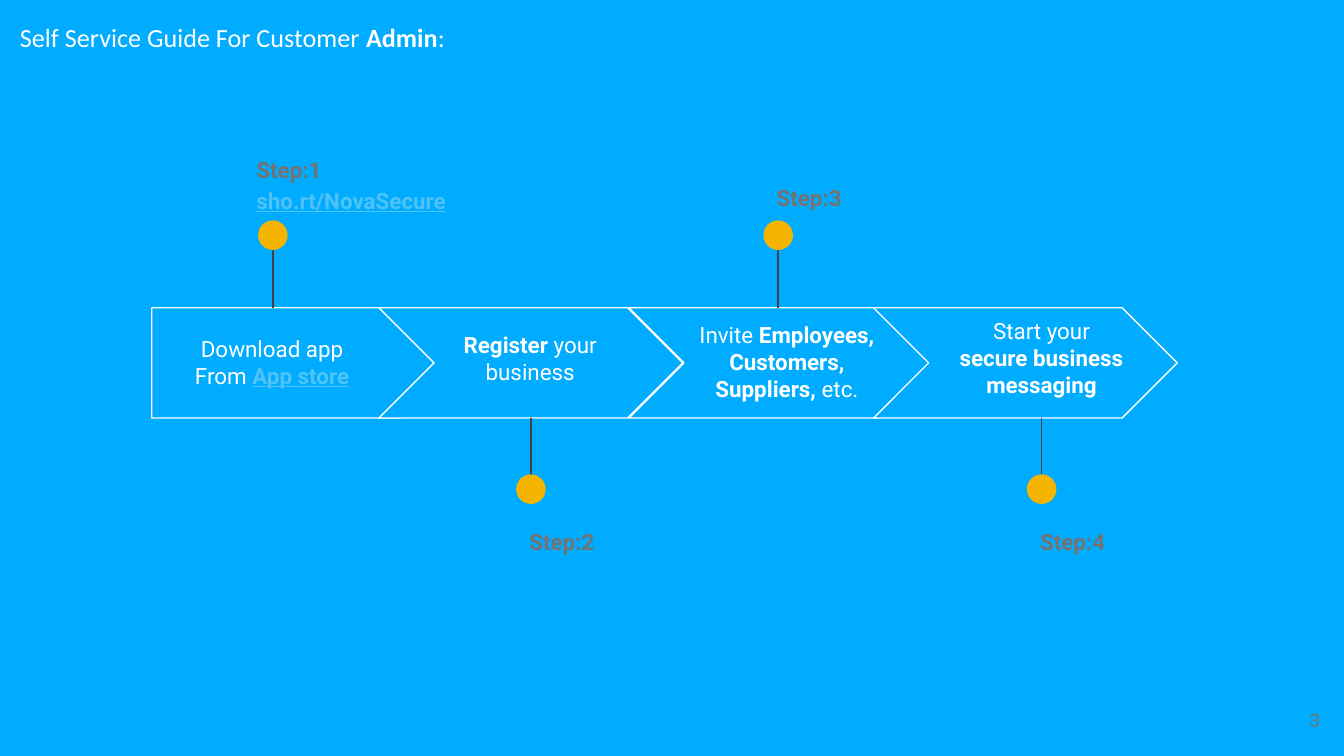
import pptx
import pptx.util
import pptx.dml.color
import pptx.enum.shapes
import pptx.enum.text
import pptx.oxml.ns
import lxml.etree

Inches = pptx.util.Inches
SHAPE = pptx.enum.shapes.MSO_SHAPE
ALIGN = pptx.enum.text.PP_ALIGN
ANCHOR = pptx.enum.text.MSO_ANCHOR

THEME = {
    "blue": "00ACFF", "white": "FFFFFF", "grey": "737373", "link": "4FC3F7",
    "dot": "F4B400", "stem": "424242",
    "title_font": "Calibri", "body_font": "Roboto",
    "title_size": 14, "body_size": 12, "number_size": 10, "line_width": 0.75,
}

# Content: each paragraph is a list of (text, style) runs
TITLE = [[("Self Service Guide For Customer ", ""), ("Admin", "bold"), (":", "")]]
PAGE_NUMBER = [[("3", "")]]
STEPS = [
    {"block_left": 1.13, "text_box": (1.23, 2.44, 1.59, 0.51), "stem": 2.03, "above": True,
     "text": [[("Download app", "")], [("From ", ""), ("App store", "bold link")]],
     "label": [[("Step:1", "bold")], [("sho.rt/NovaSecure", "bold link")]],
     "label_box": (1.81, 1.03, 2.36, 0.61)},
    {"block_left": 2.82, "text_box": (3.15, 2.41, 1.59, 0.51), "stem": 3.95, "above": False,
     "text": [[("Register", "bold"), (" your business", "")]],
     "label": [[("Step:2", "bold")]], "label_box": (3.84, 3.8, 0.83, 0.4)},
    {"block_left": 4.68, "text_box": (5.08, 2.49, 1.55, 0.4), "stem": 5.79, "above": True,
     "text": [[("Invite ", ""), ("Employees, Customers, Suppliers,", "bold"), (" etc.", "")]],
     "label": [[("Step:3", "bold")]], "label_box": (5.68, 1.24, 0.83, 0.4)},
    {"block_left": 6.5, "text_box": (7.03, 2.46, 1.44, 0.4), "stem": 7.75, "above": False,
     "text": [[("Start your ", ""), ("secure business messaging", "bold")]],
     "label": [[("Step:4", "bold")]], "label_box": (7.64, 3.8, 0.83, 0.4)},
]

# Layout
SLIDE_WIDTH = 10
SLIDE_HEIGHT = SLIDE_WIDTH * 9 / 16
BLOCK_TOP, BLOCK_WIDTH, BLOCK_HEIGHT = 2.29, 2.26, 0.82
DOT_SIZE, DOT_TOP_ABOVE, DOT_TOP_BELOW = 0.22, 1.64, 3.53


def color(name):
    return pptx.dml.color.RGBColor.from_string(THEME[name])


def add_block(slide, kind, box, fill, outline=None):
    shape = slide.shapes.add_shape(kind, *map(Inches, box))
    shape.shadow.inherit = False
    shape.fill.solid()
    shape.fill.fore_color.rgb = color(fill)
    if outline:
        shape.line.color.rgb = color(outline)
        shape.line.width = pptx.util.Pt(THEME["line_width"])
    else:
        shape.line.fill.background()


def add_text(slide, box, paragraphs, ink="white", size="body_size", font="body_font",
             align=ALIGN.LEFT, anchor=ANCHOR.TOP, spacing=None):
    text_frame = slide.shapes.add_textbox(*map(Inches, box)).text_frame
    text_frame.word_wrap = True
    text_frame.vertical_anchor = anchor
    text_frame.margin_left = text_frame.margin_right = Inches(0.1)
    text_frame.margin_top = text_frame.margin_bottom = Inches(0.1)
    for index, runs in enumerate(paragraphs):
        paragraph = text_frame.add_paragraph() if index else text_frame.paragraphs[0]
        paragraph.alignment = align
        if spacing:
            paragraph.line_spacing = spacing
        for text, style in runs:
            run = paragraph.add_run()
            run.text = text
            run.font.name = THEME[font]
            run.font.size = pptx.util.Pt(THEME[size])
            run.font.bold = "bold" in style
            run.font.underline = "link" in style
            run.font.color.rgb = color("link" if "link" in style else ink)


def add_marker(slide, center, above):
    """Draw the stem from the dot to the block's edge, then the dot."""
    dot_top = DOT_TOP_ABOVE if above else DOT_TOP_BELOW
    edge = BLOCK_TOP if above else BLOCK_TOP + BLOCK_HEIGHT
    stem = slide.shapes.add_connector(
        pptx.enum.shapes.MSO_CONNECTOR.STRAIGHT,
        Inches(center), Inches(dot_top + DOT_SIZE / 2), Inches(center), Inches(edge))
    stem.line.color.rgb = color("stem")
    stem.line.width = pptx.util.Pt(THEME["line_width"])
    lxml.etree.SubElement(stem._element.spPr, pptx.oxml.ns.qn("a:effectLst"))
    add_block(slide, SHAPE.OVAL, (center - DOT_SIZE / 2, dot_top, DOT_SIZE, DOT_SIZE), "dot")


def main():
    presentation = pptx.Presentation()
    presentation.slide_width = Inches(SLIDE_WIDTH)
    presentation.slide_height = Inches(SLIDE_HEIGHT)
    slide = presentation.slides.add_slide(presentation.slide_layouts[6])
    slide.background.fill.solid()
    slide.background.fill.fore_color.rgb = color("blue")

    # Header band and title
    add_block(slide, SHAPE.RECTANGLE, (0, -0.02, SLIDE_WIDTH, 0.61), "blue")
    add_text(slide, (0.05, 0.06, 6.98, 0.44), TITLE, size="title_size", font="title_font")

    # Process arrows, each overlapping the one before
    for index, step in enumerate(STEPS):
        kind = SHAPE.CHEVRON if index else SHAPE.PENTAGON
        box = (step["block_left"], BLOCK_TOP, BLOCK_WIDTH, BLOCK_HEIGHT)
        add_block(slide, kind, box, "blue", "white")

    # Step texts, markers and labels
    for step in STEPS:
        add_text(slide, step["text_box"], step["text"], align=ALIGN.CENTER, anchor=ANCHOR.MIDDLE)
        add_marker(slide, step["stem"], step["above"])
        add_text(slide, step["label_box"], step["label"], ink="grey", spacing=1.15)

    # Page number
    add_text(slide, (9.32, 5.14, 0.6, 0.43), PAGE_NUMBER, ink="grey", size="number_size",
             align=ALIGN.RIGHT, anchor=ANCHOR.MIDDLE)

    presentation.save("out.pptx")


if __name__ == "__main__":
    main()
